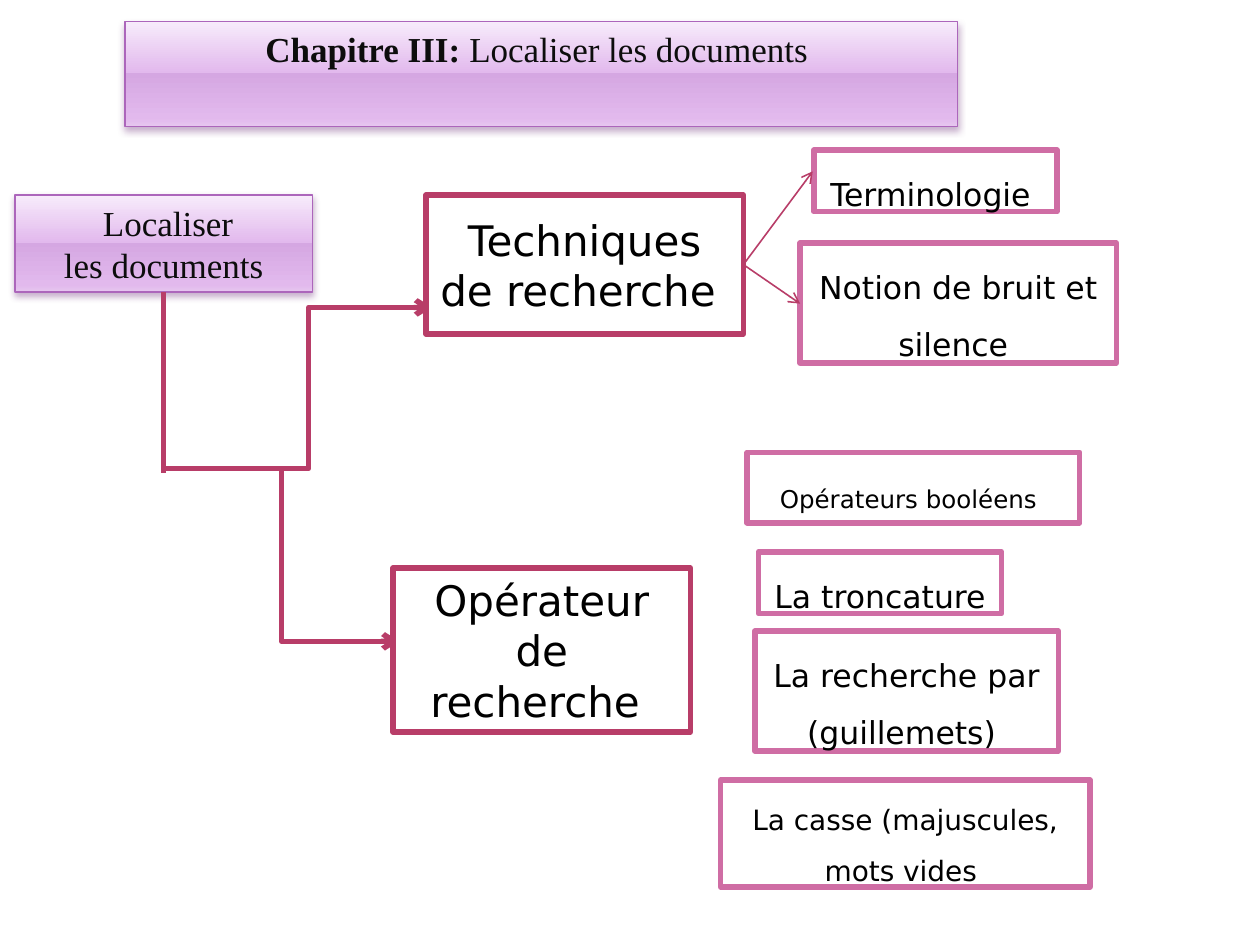
from lxml import etree
from pptx import Presentation, util as u
from pptx.dml.color import RGBColor
from pptx.enum import shapes, text
from pptx.oxml.ns import qn

COLUMNS, ROWS = 100, 75
INK = RGBColor(0x0D, 0x0D, 0x0D)
BLACK = RGBColor(0, 0, 0)
WHITE = RGBColor(255, 255, 255)
PURPLE = RGBColor(0xAC, 0x66, 0xBB)
SHADOW = RGBColor(0x6E, 0x30, 0x7B)
CRIMSON = RGBColor(0xB8, 0x3D, 0x68)
PINK = RGBColor(0xCF, 0x6D, 0xA4)
LILAC_STOPS = [
    (0, RGBColor(0xF7, 0xEB, 0xFB)),
    (49, RGBColor(0xE2, 0xB9, 0xED)),
    (49, RGBColor(0xD5, 0xA7, 0xE2)),
    (92, RGBColor(0xE2, 0xB9, 0xED)),
    (100, RGBColor(0xE6, 0xC6, 0xEF)),
]

presentation = Presentation()
presentation.slide_width = u.Inches(10)
presentation.slide_height = u.Inches(7.5)
COLUMN = presentation.slide_width / COLUMNS
ROW = presentation.slide_height / ROWS


def grid(*lengths):
    return [round(length * (ROW if index % 2 else COLUMN))
            for index, length in enumerate(lengths)]


def add_child(parent, tag, **attributes):
    return etree.SubElement(parent, qn(tag), attributes)


def add_box(slide, box):
    return slide.shapes.add_shape(shapes.MSO_SHAPE.RECTANGLE, *grid(*box))


def set_outline(shape, color, width):
    shape.line.color.rgb = color
    shape.line.width = u.Pt(width)


def style_lilac(shape):
    shape.fill.gradient()
    shape.fill.gradient_angle = 270
    properties = shape.element.spPr
    stops = properties.find(".//" + qn("a:gsLst"))
    for stop in list(stops):
        stops.remove(stop)
    for position, color in LILAC_STOPS:
        stop = add_child(stops, "a:gs", pos=str(position * 1000))
        add_child(stop, "a:srgbClr", val=str(color))
    set_outline(shape, PURPLE, 0.9)
    shape.shadow.inherit = False
    effects = properties.find(qn("a:effectLst"))
    shadow = add_child(effects, "a:outerShdw", blurRad=str(u.Pt(4)),
                       dist=str(u.Pt(2)), dir="5400000", rotWithShape="0")
    color = add_child(shadow, "a:srgbClr", val=str(SHADOW))
    add_child(color, "a:alpha", val="38000")


def write(shape, paragraphs, font_name, size, color, spacing=1.0, grow=True):
    frame = shape.text_frame
    frame.word_wrap = True
    frame.vertical_anchor = text.MSO_ANCHOR.TOP if grow else text.MSO_ANCHOR.MIDDLE
    frame.auto_size = (text.MSO_AUTO_SIZE.SHAPE_TO_FIT_TEXT if grow
                       else text.MSO_AUTO_SIZE.NONE)
    for index, wording in enumerate(paragraphs):
        paragraph = frame.add_paragraph() if index else frame.paragraphs[0]
        paragraph.alignment = text.PP_ALIGN.CENTER
        paragraph.line_spacing = spacing
        paragraph.font.name = font_name
        paragraph.font.size = u.Pt(size)
        paragraph.font.color.rgb = color
        paragraph.add_run().text = wording
    return frame.paragraphs[0]


def place_title(slide, box):
    title = slide.shapes.title
    title.left, title.top, title.width, title.height = grid(*box)
    style_lilac(title)
    paragraph = write(title, ["Chapitre III: "], "Times New Roman", 20, INK)
    paragraph.runs[0].font.bold = True
    paragraph.add_run().text = "Localiser les documents "


def add_root(slide, box):
    root = add_box(slide, box)
    style_lilac(root)
    write(root, [" Localiser", " les documents "], "Times New Roman", 20, INK)


def add_framed(slide, box, wording, size, color, **options):
    shape = add_box(slide, box)
    shape.shadow.inherit = False
    shape.fill.solid()
    shape.fill.fore_color.rgb = WHITE
    set_outline(shape, color, 3.15)
    return write(shape, [wording], "DejaVu Sans", size, BLACK, **options)


def add_branch(slide, box, wording):
    add_framed(slide, box, wording, 24, CRIMSON, grow=False)


def add_leaf(slide, box, wording, size=18):
    return add_framed(slide, box, wording, size, PINK, spacing=1.5)


def add_link(slide, start, end, width, elbow=False, arrow=True):
    kind = shapes.MSO_CONNECTOR.ELBOW if elbow else shapes.MSO_CONNECTOR.STRAIGHT
    link = slide.shapes.add_connector(kind, *grid(*start, *end))
    set_outline(link, CRIMSON, width)
    if arrow:
        add_child(link.line._get_or_add_ln(), "a:tailEnd", type="arrow")
    add_child(link.element.spPr, "a:effectLst")


def add_trunk(slide, root, operators_tip, techniques_tip):
    left, top, width, height = root
    stem = left + width / 2
    junction = 37.2
    add_link(slide, (stem, junction), operators_tip, 3, elbow=True)
    add_link(slide, (stem, top + height), (stem, junction + 0.3), 3, arrow=False)
    add_link(slide, (stem + 1.7, junction), techniques_tip, 3, elbow=True)


def add_techniques(slide, box):
    left, top, width, height = box
    right, middle = left + width, top + height / 2
    add_branch(slide, box, "Techniques de recherche ")
    add_leaf(slide, (right + 5.6, top - 3.6, 19.3, 4.9), "Terminologie ")
    add_leaf(slide, (right + 4.5, top + 3.8, 25.1, 9.5), "Notion de bruit et silence ")
    for across, down in ((4.5, 3.1), (5.5, -7.4)):
        add_link(slide, (right, middle), (right + across, middle + down), 0.9)


def add_operators(slide, box):
    left, top, width, height = box
    right = left + width
    add_branch(slide, box, "Opérateur de recherche ")
    paragraph = add_leaf(slide, (right + 4.5, top - 9.2, 26.4, 5.6),
                         "Opérateurs booléens", 14)
    space = paragraph.add_run()
    space.text = " "
    space.font.size = u.Pt(18)
    add_leaf(slide, (right + 5.4, top - 1.3, 19.3, 4.9), "La troncature ")
    add_leaf(slide, (right + 5.1, top + 5, 24.1, 9.5), "La recherche par (guillemets) ")
    add_leaf(slide, (right + 2.4, top + 16.8, 29.3, 8.5),
             "La casse (majuscules, mots vides ", 16)


def main():
    slide = presentation.slides.add_slide(presentation.slide_layouts[5])
    root = (1.2, 15.5, 23.6, 7.7)
    place_title(slide, (9.9, 1.7, 66.1, 4.4))
    add_root(slide, root)
    add_trunk(slide, root, (31.7, 50.9), (34.3, 24.4))
    add_techniques(slide, (33.8, 15.5, 25.2, 11))
    add_operators(slide, (31.2, 45.1, 23.6, 13))
    presentation.save("out.pptx")


if __name__ == "__main__":
    main()
